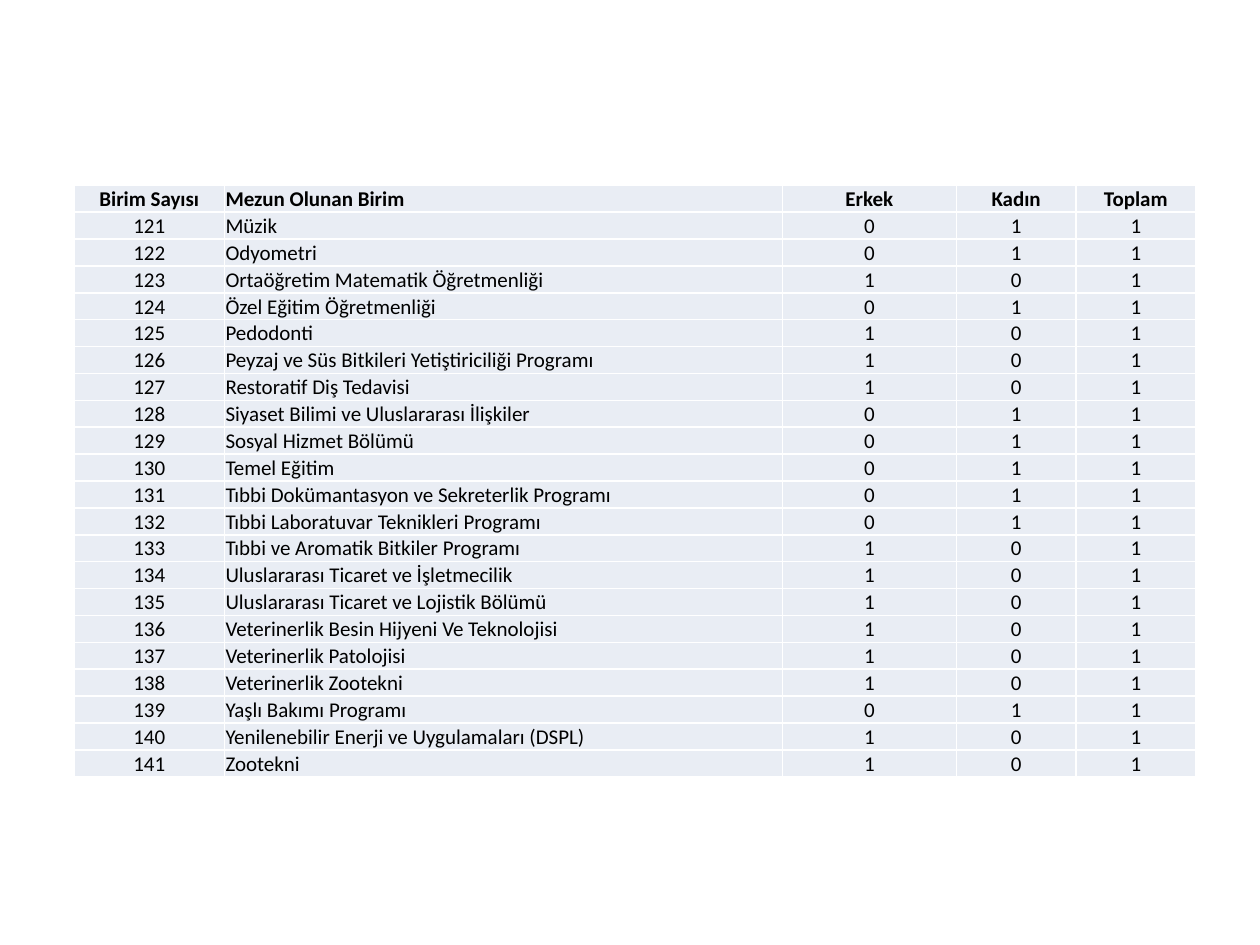
from typing import NamedTuple

from lxml.etree import SubElement
from pptx import Presentation
from pptx.dml.color import RGBColor as RGB
from pptx.enum.text import MSO_ANCHOR as Anchor, PP_ALIGN as Align
from pptx.oxml.ns import qn
from pptx.util import Inches, Pt

BLACK = RGB(0x00, 0x00, 0x00)
WHITE = RGB(0xFF, 0xFF, 0xFF)
PALE = RGB(0xE9, 0xED, 0xF4)

FONT = "Calibri"
ROW_H = 0.21
INSET = Inches(0.01)
FIRST_NO = 121


class Column(NamedTuple):
    head: str
    width: float
    align: Align


class Unit(NamedTuple):
    name: str
    men: int
    women: int


COLUMNS = [
    Column("Birim Sayısı", 1.19, Align.CENTER),
    Column("Mezun Olunan Birim", 4.43, Align.LEFT),
    Column("Erkek", 1.38, Align.CENTER),
    Column("Kadın", 0.95, Align.CENTER),
    Column("Toplam", 0.95, Align.CENTER),
]

UNITS = [
    Unit("Müzik", 0, 1),
    Unit("Odyometri", 0, 1),
    Unit("Ortaöğretim Matematik Öğretmenliği", 1, 0),
    Unit("Özel Eğitim Öğretmenliği", 0, 1),
    Unit("Pedodonti", 1, 0),
    Unit("Peyzaj ve Süs Bitkileri Yetiştiriciliği Programı", 1, 0),
    Unit("Restoratif Diş Tedavisi", 1, 0),
    Unit("Siyaset Bilimi ve Uluslararası İlişkiler", 0, 1),
    Unit("Sosyal Hizmet Bölümü", 0, 1),
    Unit("Temel Eğitim", 0, 1),
    Unit("Tıbbi Dokümantasyon ve Sekreterlik Programı", 0, 1),
    Unit("Tıbbi Laboratuvar Teknikleri Programı", 0, 1),
    Unit("Tıbbi ve Aromatik Bitkiler Programı", 1, 0),
    Unit("Uluslararası Ticaret ve İşletmecilik", 1, 0),
    Unit("Uluslararası Ticaret ve Lojistik Bölümü", 1, 0),
    Unit("Veterinerlik Besin Hijyeni Ve Teknolojisi", 1, 0),
    Unit("Veterinerlik Patolojisi", 1, 0),
    Unit("Veterinerlik Zootekni", 1, 0),
    Unit("Yaşlı Bakımı Programı", 0, 1),
    Unit("Yenilenebilir Enerji ve Uygulamaları (DSPL)", 1, 0),
    Unit("Zootekni", 1, 0),
]


def add_borders(cell) -> None:
    """Put a thin white line on all four sides; call before the fill is set."""
    props = cell._tc.get_or_add_tcPr()
    for side in ("lnL", "lnR", "lnT", "lnB"):
        line = SubElement(props, qn(f"a:{side}"), w=str(Pt(1)))
        fill = SubElement(line, qn("a:solidFill"))
        SubElement(fill, qn("a:srgbClr"), val=str(WHITE))


def fill_cell(cell, text: str, align: Align, bold: bool) -> None:
    add_borders(cell)
    cell.fill.solid()
    cell.fill.fore_color.rgb = PALE
    cell.vertical_anchor = Anchor.MIDDLE
    cell.margin_left = cell.margin_right = cell.margin_top = INSET
    cell.margin_bottom = 0
    par = cell.text_frame.paragraphs[0]
    par.text = text
    par.alignment = align
    font = par.runs[0].font
    font.name, font.size, font.bold = FONT, Pt(12), bold
    font.color.rgb = BLACK


def add_grid(slide, rows: list[list[str]]) -> None:
    width = sum(col.width for col in COLUMNS)
    table = slide.shapes.add_table(
        len(rows), len(COLUMNS), Inches(0.59), Inches(1.47),
        Inches(width), Inches(ROW_H * len(rows))).table
    table.first_row = table.horz_banding = False
    for col, part in zip(COLUMNS, table.columns):
        part.width = Inches(col.width)
    for r, row in enumerate(rows):
        table.rows[r].height = Inches(ROW_H)
        for c, (text, col) in enumerate(zip(row, COLUMNS)):
            fill_cell(table.cell(r, c), text, col.align, bold=r == 0)


def main() -> None:
    deck = Presentation()
    deck.slide_width, deck.slide_height = Inches(10), Inches(7.5)
    slide = deck.slides.add_slide(deck.slide_layouts[6])

    # Header row, then one numbered row per unit with its total
    rows = [[col.head for col in COLUMNS]]
    for no, unit in enumerate(UNITS, FIRST_NO):
        total = unit.men + unit.women
        rows.append([str(no), unit.name, str(unit.men), str(unit.women), str(total)])
    add_grid(slide, rows)

    deck.save("out.pptx")


if __name__ == "__main__":
    main()
